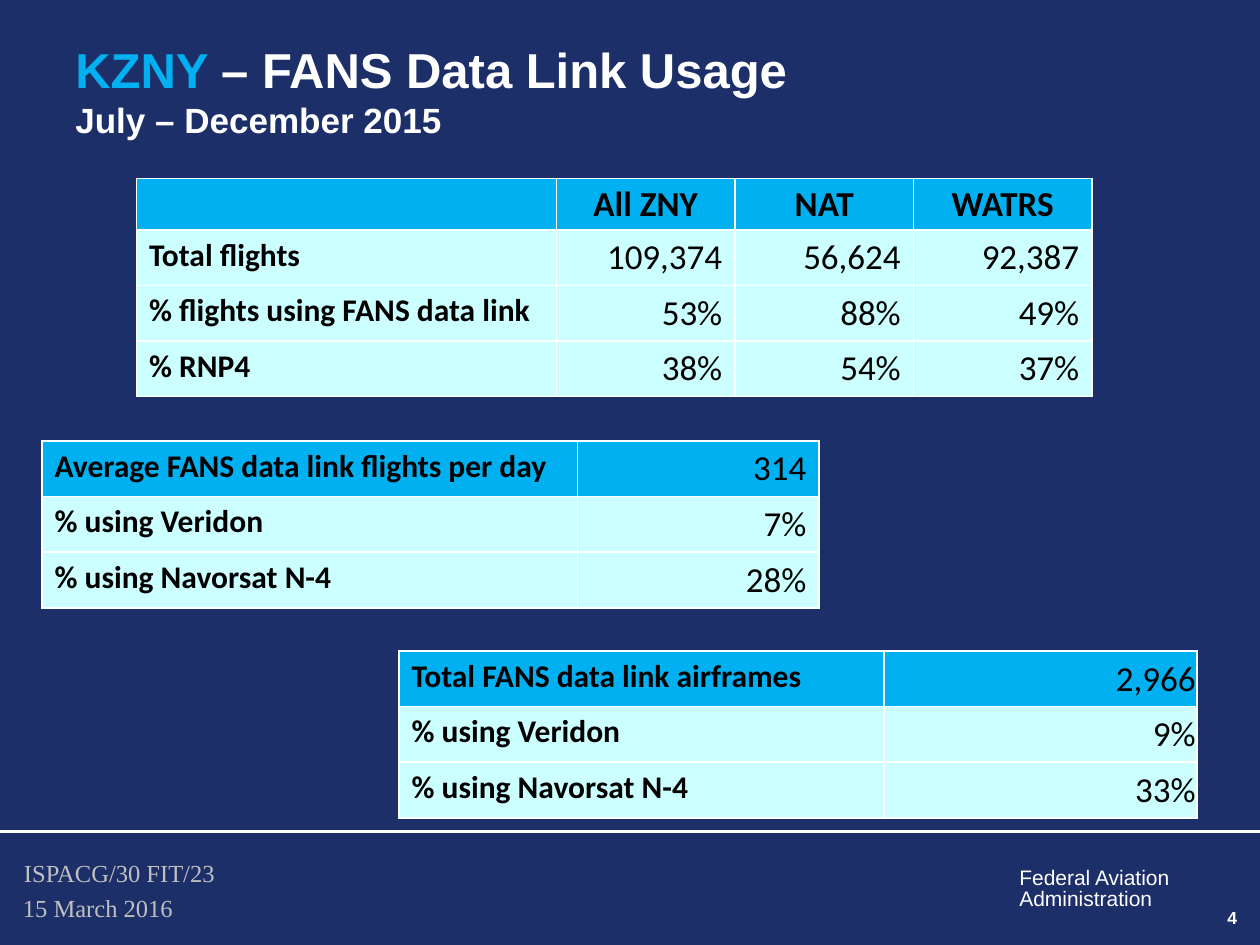
from dataclasses import dataclass

import lxml.etree
import pptx
import pptx.dml.color
import pptx.enum.shapes
import pptx.enum.text
import pptx.oxml.ns
import pptx.util

ALIGN = pptx.enum.text.PP_ALIGN
ANCHOR = pptx.enum.text.MSO_ANCHOR
FIT = pptx.enum.text.MSO_AUTO_SIZE

GRID_COLUMNS, GRID_ROWS = 120, 90
PAGE_WIDTH = pptx.util.Inches(10)
PAGE_HEIGHT = pptx.util.Inches(7.5)

NAVY, WHITE, BLACK, SILVER = "1D2F68", "FFFFFF", "000000", "C0C0C0"
SKY, ICE = "00B0F0", "CCFFFF"

TIGHT = dict(zip(("margin_left", "margin_top", "margin_right", "margin_bottom"),
                 map(pptx.util.Inches, (0.01, 0.01, 0.01, 0))))


@dataclass(frozen=True)
class Style:
    size: float
    color: str = WHITE
    name: str = "Arial"
    bold: bool = False


@dataclass(frozen=True)
class Span:
    text: str
    style: Style


@dataclass(frozen=True)
class Label:
    place: tuple
    lines: tuple
    box_format: dict
    para_format: dict


@dataclass(frozen=True)
class DataTable:
    left: float
    top: float
    column_widths: tuple
    row_heights: tuple
    rows: tuple
    centred_header: bool = False
    tight_values: bool = False


HEADING = Style(20, BLACK, "Calibri", True)
ROW_NAME = Style(18, BLACK, "Calibri", True)
VALUE = Style(20, BLACK, "Calibri")
AGENCY = Style(12)
MEETING = Style(14, SILVER, "Times New Roman")

LABELS = (
    Label((6, 5, 108, 7.2),
          ((Span("KZNY ", Style(28, SKY, bold=True)),
            Span("– FANS Data Link Usage", Style(28, bold=True))),
           (Span("July – December 2015", Style(20, bold=True)),)),
          {"word_wrap": True, "vertical_anchor": ANCHOR.MIDDLE}, {}),
    Label((95.9, 82.1, 16.8, 5.3),
          ((Span("Federal Aviation", AGENCY),), (Span("Administration", AGENCY),)),
          {"word_wrap": False, "auto_size": FIT.SHAPE_TO_FIT_TEXT},
          {"line_spacing": 0.85}),
    Label((1.1, 81.1, 62.8, 4.1), ((Span("ISPACG/30 FIT/23", MEETING),),),
          {"word_wrap": True, "auto_size": FIT.SHAPE_TO_FIT_TEXT}, {}),
    Label((1, 84.5, 49, 4.1), ((Span("15 March 2016", MEETING),),),
          {"word_wrap": True, "auto_size": FIT.SHAPE_TO_FIT_TEXT}, {}),
    Label((99, 85.8, 20, 6.2), ((Span("4", Style(10, bold=True)),),),
          {"word_wrap": True}, {"alignment": ALIGN.RIGHT}),
)

TABLES = (
    DataTable(13, 17, (40, 17, 17, 17), (4.9, 5.3, 5.3, 5.3),
              (("", "All ZNY", "NAT", "WATRS"),
               ("Total flights", "109,374", "56,624", "92,387"),
               ("% flights using FANS data link", "53%", "88%", "49%"),
               ("% RNP4", "38%", "54%", "37%")),
              centred_header=True),
    DataTable(4, 42, (51, 23), (5.3, 5.3, 5.3),
              (("Average FANS data link flights per day", "314"),
               ("% using Veridon", "7%"),
               ("% using Navorsat N-4", "28%"))),
    DataTable(38, 62, (46.2, 29.8), (5.3, 5.3, 5.3),
              (("Total FANS data link airframes", "2,966"),
               ("% using Veridon", "9%"),
               ("% using Navorsat N-4", "33%")),
              tight_values=True),
)


def across(columns: float) -> int:
    return round(PAGE_WIDTH * columns / GRID_COLUMNS)


def down(rows: float) -> int:
    return round(PAGE_HEIGHT * rows / GRID_ROWS)


def rgb(value: str) -> pptx.dml.color.RGBColor:
    return pptx.dml.color.RGBColor.from_string(value)


def apply_format(target, values: dict) -> None:
    for key, value in values.items():
        setattr(target, key, value)


def paint(fill, color: str) -> None:
    fill.solid()
    fill.fore_color.rgb = rgb(color)


def add_span(para, span: Span) -> None:
    run = para.add_run()
    run.text = span.text
    style = span.style
    apply_format(run.font, {"size": pptx.util.Pt(style.size), "name": style.name,
                            "bold": style.bold})
    run.font.color.rgb = rgb(style.color)


def draw_label(page, label: Label) -> None:
    left, top, width, height = label.place
    box = page.shapes.add_textbox(across(left), down(top), across(width), down(height))
    apply_format(box.text_frame, label.box_format)
    para = box.text_frame.paragraphs[0]
    apply_format(para, label.para_format)
    for index, line in enumerate(label.lines):
        if index:
            para.add_line_break()
        for span in line:
            add_span(para, span)


def draw_rule(page, row: float) -> None:
    rule = page.shapes.add_connector(pptx.enum.shapes.MSO_CONNECTOR.STRAIGHT,
                                     0, down(row), PAGE_WIDTH, down(row))
    rule.line.color.rgb = rgb(WHITE)
    rule.line.width = pptx.util.Pt(1.5)
    lxml.etree.SubElement(rule._element.spPr, pptx.oxml.ns.qn("a:effectLst"))


def add_borders(cell) -> None:
    properties = cell._tc.get_or_add_tcPr()
    for side in ("lnL", "lnR", "lnT", "lnB"):
        edge = lxml.etree.SubElement(properties, pptx.oxml.ns.qn(f"a:{side}"),
                                     w=str(pptx.util.Pt(1)))
        solid = lxml.etree.SubElement(edge, pptx.oxml.ns.qn("a:solidFill"))
        lxml.etree.SubElement(solid, pptx.oxml.ns.qn("a:srgbClr"), val=WHITE)


def draw_cell(cell, text: str, row: int, column: int, table: DataTable) -> None:
    add_borders(cell)
    paint(cell.fill, ICE if row else SKY)
    heading = table.centred_header and row == 0
    if column == 0:
        style, alignment, anchor = ROW_NAME, ALIGN.LEFT, ANCHOR.TOP
    elif heading:
        style, alignment, anchor = HEADING, ALIGN.CENTER, ANCHOR.MIDDLE
    else:
        style, alignment = VALUE, ALIGN.RIGHT
        anchor = ANCHOR.MIDDLE if table.tight_values else ANCHOR.BOTTOM
    if column and (heading or table.tight_values):
        apply_format(cell, TIGHT)
    cell.vertical_anchor = anchor
    para = cell.text_frame.paragraphs[0]
    para.alignment = alignment
    if text:
        add_span(para, Span(text, style))


def draw_table(page, table: DataTable) -> None:
    frame = page.shapes.add_table(
        len(table.rows), len(table.column_widths), across(table.left), down(table.top),
        across(sum(table.column_widths)), down(sum(table.row_heights)))
    grid = frame.table
    for column, width in zip(grid.columns, table.column_widths):
        column.width = across(width)
    for row, height in zip(grid.rows, table.row_heights):
        row.height = down(height)
    for row, texts in enumerate(table.rows):
        for column, text in enumerate(texts):
            draw_cell(grid.cell(row, column), text, row, column, table)


def main() -> None:
    deck = pptx.Presentation()
    apply_format(deck, {"slide_width": PAGE_WIDTH, "slide_height": PAGE_HEIGHT})
    page = deck.slides.add_slide(deck.slide_layouts[6])
    paint(page.background.fill, NAVY)
    draw_rule(page, 79.2)
    for label in LABELS:
        draw_label(page, label)
    for table in TABLES:
        draw_table(page, table)
    deck.save("out.pptx")


if __name__ == "__main__":
    main()
